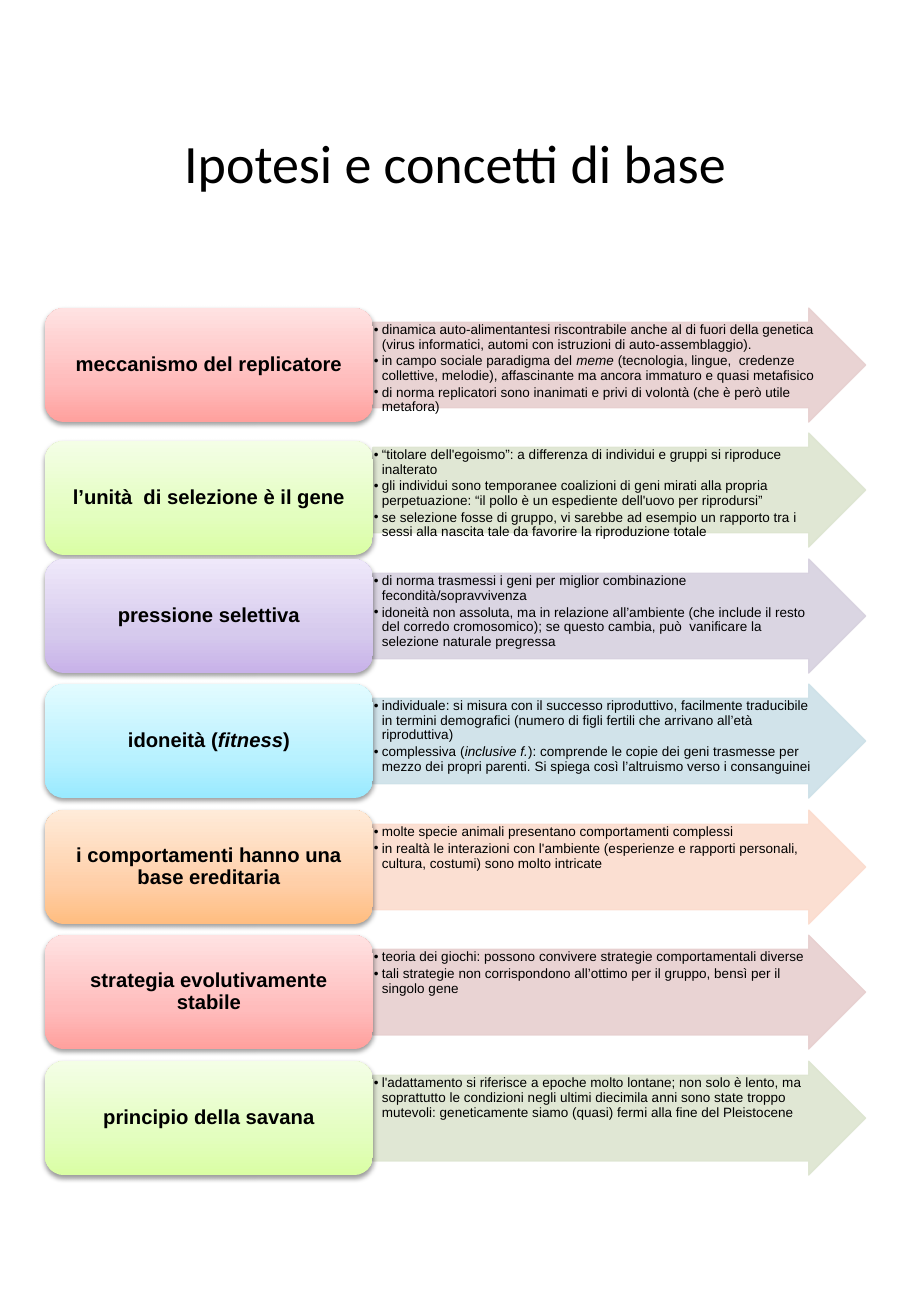
from copy import deepcopy

from lxml import etree
from pptx import Presentation
from pptx import util as u
from pptx.dml.color import RGBColor
from pptx.enum import shapes, text
from pptx.oxml.ns import nsdecls, qn

PX = 914400 / 121.5
LEFT, SPLIT, RIGHT = 45, 373, 866
TOP, SPAN, TALL = 308, 753, 114
INK = "000000"

# Arrow fill, then the box gradient from bottom to top
ROSE = ("E7CFCF", ["FFA09D", "FFBCBC", "FFE2E2"])
LIME = ("DDE5D0", ["DAFEA4", "E3FEBF", "F4FEE6"])
LILAC = ("D7D1DF", ["C8B2E9", "D6CAED", "EFE8FA"])
AQUA = ("CDE1E8", ["99EAFF", "B8F1FF", "E2FBFF"])
PEACH = ("FBDCCE", ["FFBD80", "FFCFA8", "FFEBD9"])

# Heading, palette, drop of the box in px, points; *...* is italic
ROWS = [
    ("meccanismo del replicatore", ROSE, 0, [
        "dinamica auto-alimentantesi riscontrabile anche al di fuori della genetica "
        "(virus informatici, automi con istruzioni di auto-assemblaggio).",
        "in campo sociale paradigma del *meme* (tecnologia, lingue,  credenze collettive, "
        "melodie), affascinante ma ancora immaturo e quasi metafisico",
        "di norma replicatori sono inanimati e privi di volontà (che è però utile metafora)"]),
    ("l’unità  di selezione è il gene", LIME, 8, [
        "“titolare dell'egoismo”: a differenza di individui e gruppi si riproduce inalterato",
        "gli individui sono temporanee coalizioni di geni mirati alla propria perpetuazione: "
        "“il pollo è un espediente dell'uovo per riprodursi”",
        "se selezione fosse di gruppo, vi sarebbe ad esempio un rapporto tra i sessi alla "
        "nascita tale da favorire la riproduzione totale"]),
    ("pressione selettiva", LILAC, 0, [
        "di norma trasmessi i geni per miglior combinazione fecondità/sopravvivenza",
        "idoneità non assoluta, ma in relazione all’ambiente (che include il resto del corredo "
        "cromosomico); se questo cambia, può  vanificare la selezione naturale pregressa"]),
    ("idoneità (*fitness*)", AQUA, 0, [
        "individuale: si misura con il successo riproduttivo, facilmente traducibile in termini "
        "demografici (numero di figli fertili che arrivano all’età riproduttiva)",
        "complessiva (*inclusive f.*): comprende le copie dei geni trasmesse per mezzo dei "
        "propri parenti. Si spiega così l’altruismo verso i consanguinei"]),
    ("i comportamenti hanno una base ereditaria", PEACH, 0, [
        "molte specie animali presentano comportamenti complessi",
        "in realtà le interazioni con l'ambiente (esperienze e rapporti personali, cultura, "
        "costumi) sono molto intricate"]),
    ("strategia evolutivamente stabile", ROSE, 0, [
        "teoria dei giochi: possono convivere strategie comportamentali diverse",
        "tali strategie non corrispondono all’ottimo per il gruppo, bensì per il singolo gene"]),
    ("principio della savana", LIME, 0, [
        "l'adattamento si riferisce a epoche molto lontane; non solo è lento, ma soprattutto le "
        "condizioni negli ultimi diecimila anni sono state troppo mutevoli: geneticamente siamo "
        "(quasi) fermi alla fine del Pleistocene"]),
]


def px(n):
    return u.Emu(round(n * PX))


def color(code):
    return RGBColor.from_string(code)


def place(item, x, y, w, h):
    item.left, item.top, item.width, item.height = px(x), px(y), px(w), px(h)


def style(para, name, size, bold=False):
    font = para.font
    font.name, font.size, font.bold = name, u.Pt(size), bold
    font.color.rgb = color(INK)


def write(para, words):
    """Add runs, with every second part in italics."""
    para.line_spacing = 0.9
    for i, part in enumerate(words.split("*")):
        run = para.add_run()
        run.text = part
        if i % 2:
            run.font.italic = True


def frame(shape, anchor, pads):
    body = shape.text_frame
    body.word_wrap = True
    body.vertical_anchor = anchor
    (body.margin_left, body.margin_top,
     body.margin_right, body.margin_bottom) = map(px, pads)
    return body


def bullet(para):
    props = para._p.get_or_add_pPr()
    props.set("marL", str(px(8)))
    props.set("indent", str(px(-8)))
    tint = etree.SubElement(props, qn("a:buClr"))
    etree.SubElement(tint, qn("a:srgbClr"), val=INK)
    etree.SubElement(props, qn("a:buFont"), typeface="Arial")
    etree.SubElement(props, qn("a:buChar"), char="•")


def arrow(slide, y, tint, points):
    shape = slide.shapes.add_shape(shapes.MSO_SHAPE.RIGHT_ARROW, px(SPLIT), px(y),
                                   px(RIGHT - SPLIT), px(TALL))
    shape.adjustments[0], shape.adjustments[1] = 0.75, 0.5
    shape.shadow.inherit = False
    shape.fill.solid()
    shape.fill.fore_color.rgb = color(tint)
    shape.line.color.rgb = color(tint)
    shape.line.width = u.Pt(0.75)
    for node in shape._element.spPr.iter(qn("a:srgbClr")):
        etree.SubElement(node, qn("a:alpha"), val="90000")
    body = frame(shape, text.MSO_ANCHOR.TOP, (1, 1, 1, 1))
    for i, words in enumerate(points):
        para = body.add_paragraph() if i else body.paragraphs[0]
        para.level = 1
        para.alignment = text.PP_ALIGN.LEFT
        bullet(para)
        para.space_before = u.Pt(1.2 if i else 0)
        write(para, words)
        style(para, "Arial", 8)


def shade(shape, tints):
    shape.fill.gradient()
    shape.fill.gradient_angle = 90
    stops = shape._element.spPr.find(".//" + qn("a:gsLst"))
    stops.append(deepcopy(stops[0]))
    for stop, spot, tint in zip(shape.fill.gradient_stops, (0, 0.35, 1), tints):
        stop.position = spot
        stop.color.rgb = color(tint)


def shadow(shape):
    shape.shadow.inherit = False
    effect = shape._element.spPr.find(qn("a:effectLst"))
    effect.append(etree.fromstring(
        f'<a:outerShdw {nsdecls("a")} blurRad="{u.Pt(3.1)}" dist="{u.Pt(1.6)}" '
        f'dir="5400000" rotWithShape="0"><a:srgbClr val="{INK}">'
        '<a:alpha val="38000"/></a:srgbClr></a:outerShdw>'))


def box(slide, y, tints, words):
    shape = slide.shapes.add_shape(shapes.MSO_SHAPE.ROUNDED_RECTANGLE, px(LEFT), px(y),
                                   px(SPLIT - LEFT), px(TALL))
    shade(shape, tints)
    shape.line.fill.background()
    shadow(shape)
    para = frame(shape, text.MSO_ANCHOR.MIDDLE, (6, 3, 6, 3)).paragraphs[0]
    para.alignment = text.PP_ALIGN.CENTER
    write(para, words)
    style(para, "Arial", 12, True)


def title(slide, words):
    item = slide.shapes.title
    place(item, LEFT, 52, RIGHT - LEFT, 220)
    body = frame(item, text.MSO_ANCHOR.MIDDLE, (9, 5, 9, 5))
    body.text = words
    para = body.paragraphs[0]
    para.alignment = text.PP_ALIGN.CENTER
    style(para, "Calibri", 32)


def main():
    deck = Presentation()
    deck.slide_width, deck.slide_height = u.Inches(7.5), u.Inches(10.83)
    slide = deck.slides.add_slide(deck.slide_layouts[5])
    title(slide, "Ipotesi e concetti di base")
    # Seven evenly spaced rows
    for i, (head, (tint, tints), drop, points) in enumerate(ROWS):
        y = TOP + SPAN * i // (len(ROWS) - 1)
        arrow(slide, y, tint, points)
        box(slide, y + drop, tints, head)
    deck.save("out.pptx")


if __name__ == "__main__":
    main()
